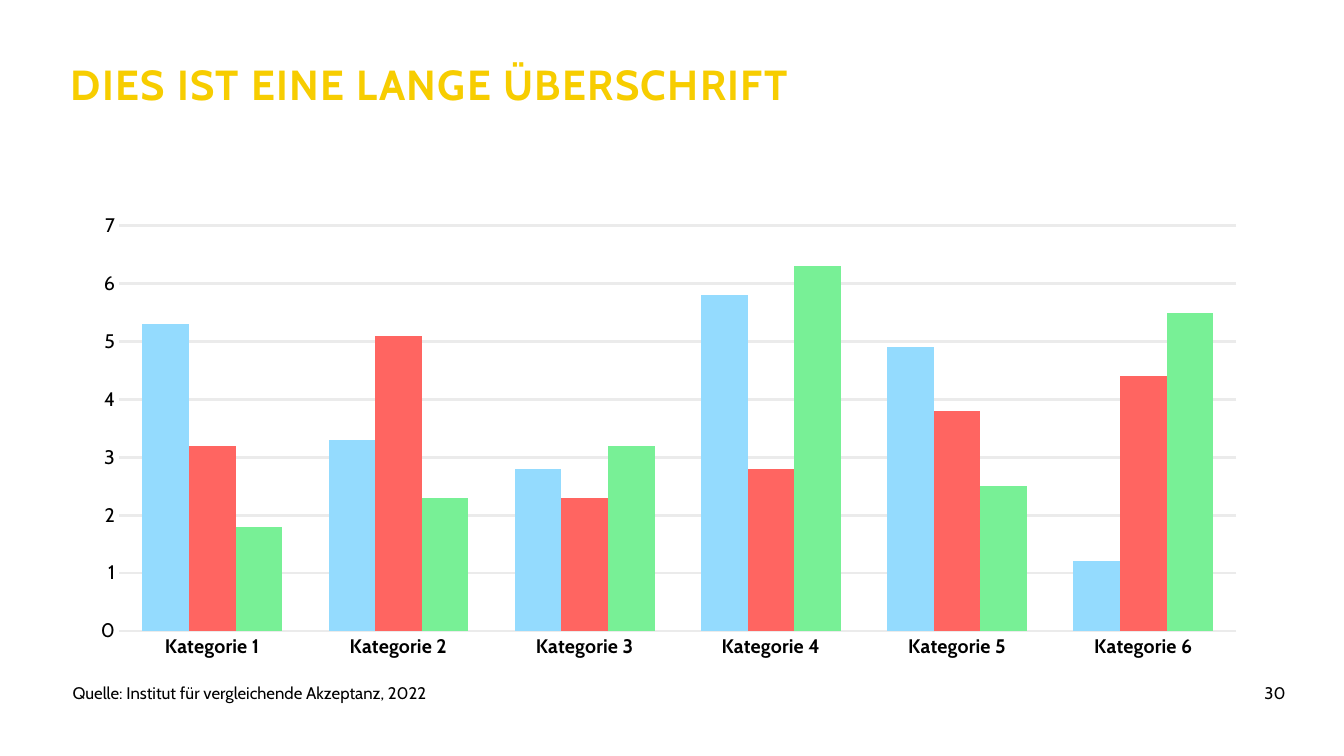
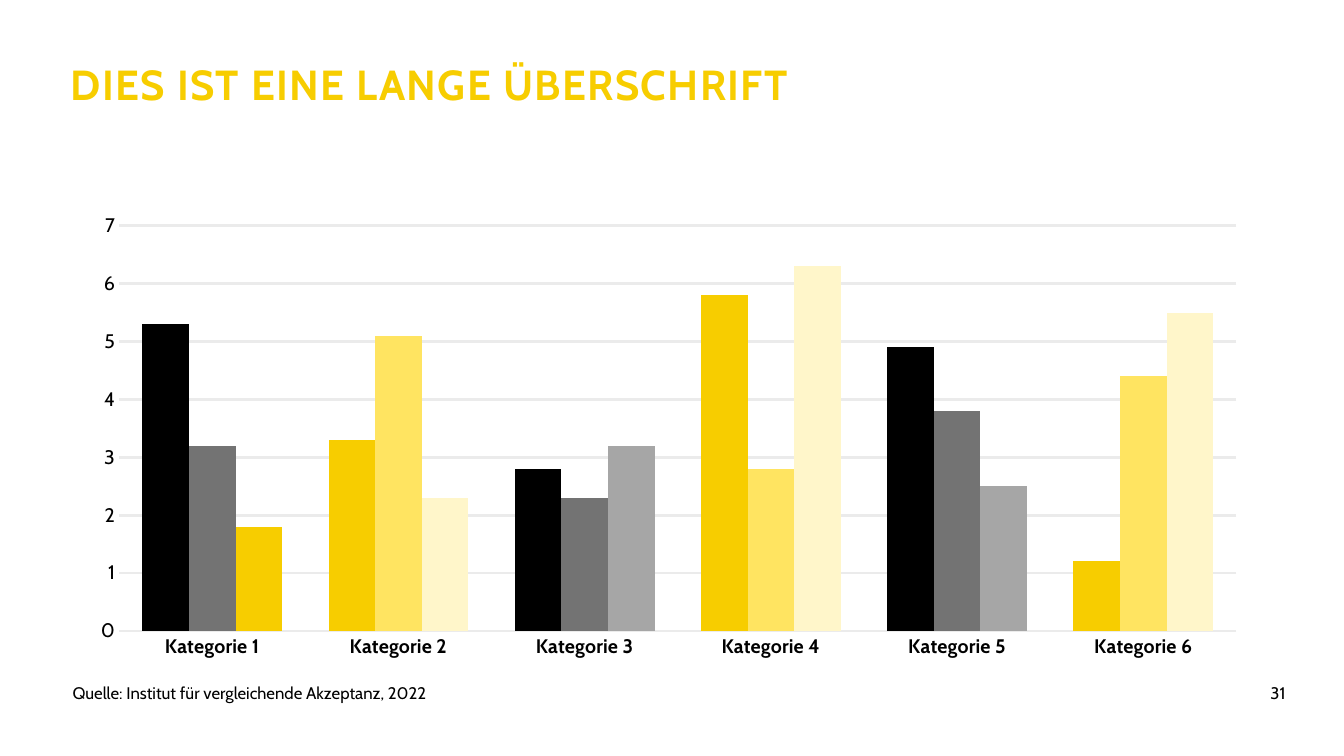
from lxml import etree
from pptx import Presentation
from pptx.chart.data import CategoryChartData
from pptx.dml.color import RGBColor
from pptx.enum.chart import XL_CHART_TYPE, XL_TICK_MARK
from pptx.enum.text import PP_ALIGN
from pptx.oxml.ns import qn
from pptx.util import Inches, Pt

COLUMNS = XL_CHART_TYPE.COLUMN_CLUSTERED
NO_TICK = XL_TICK_MARK.NONE
LEFT, RIGHT = PP_ALIGN.LEFT, PP_ALIGN.RIGHT

FONT = "Cabin"
BLACK, YELLOW, GRID = "000000", "F7CD00", "EBEBEB"
TITLE = "DIES IST EINE LANGE ÜBERSCHRIFT"
SOURCE = "Quelle: Institut für vergleichende Akzeptanz, 2022"

TITLE_BOX = (0.7, 0.66, 8.2, 1.12)
SOURCE_BOX = (0.72, 6.77, 8.18, 0.4)
NUMBER_BOX = (10.6, 6.77, 2.15, 0.4)
CHART_BOX = (0.71, 2.01, 11.79, 4.62)
PLOT_SHARES = {"x": 0.04, "y": 0.05, "w": 0.94, "h": 0.87}

CATEGORIES = [f"Kategorie {number}" for number in range(1, 7)]
SERIES = [
    ("Series 1", (5.3, 3.3, 2.8, 5.8, 4.9, 1.2)),
    ("Series 2", (3.2, 5.1, 2.3, 2.8, 3.8, 4.4)),
    ("Series 3", (1.8, 2.3, 3.2, 6.3, 2.5, 5.5)),
]
YELLOWS = (YELLOW, "FFE461", "FFF6CA")
SLIDES = [
    {"number": "30", "colors": ("94DBFE", "FF6561", "78F096"), "points": {}},
    {
        "number": "31",
        "colors": (BLACK, "737373", "A6A6A6"),
        "points": {
            (row, column): color
            for row, color in enumerate(YELLOWS)
            for column in (1, 3, 5)
        } | {(2, 0): YELLOW},
    },
]


def rgb(value):
    return RGBColor.from_string(value)


def style(font, size, color=BLACK, bold=False):
    font.name = FONT
    font.size = Pt(size)
    font.bold = bold
    font.color.rgb = rgb(color)


def fill(part, color):
    part.format.fill.solid()
    part.format.fill.fore_color.rgb = rgb(color)


def add_text(slide, box, text, size, color=BLACK, bold=False, align=LEFT):
    frame = slide.shapes.add_textbox(*map(Inches, box)).text_frame
    frame.word_wrap = True
    frame.margin_left = frame.margin_right = 0
    frame.margin_top = frame.margin_bottom = 0
    frame.text = text
    paragraph = frame.paragraphs[0]
    paragraph.alignment = align
    style(paragraph.runs[0].font, size, color, bold)
    return paragraph


def place_plot(chart):
    plot_area = chart._chartSpace.chart.plotArea
    for old_layout in plot_area.findall(qn("c:layout")):
        plot_area.remove(old_layout)
    layout = etree.Element(qn("c:layout"))
    manual = etree.SubElement(layout, qn("c:manualLayout"))
    settings = {"layoutTarget": "inner", "xMode": "edge", "yMode": "edge"}
    for name, value in (settings | PLOT_SHARES).items():
        etree.SubElement(manual, qn(f"c:{name}"), val=str(value))
    plot_area.insert(0, layout)


def add_column_chart(slide, colors, points):
    data = CategoryChartData()
    data.categories = CATEGORIES
    for name, values in SERIES:
        data.add_series(name, values)
    chart = slide.shapes.add_chart(COLUMNS, *map(Inches, CHART_BOX), data).chart
    chart.has_legend = False
    chart.has_title = False
    style(chart.font, 10)

    plot = chart.plots[0]
    plot.gap_width = 100
    plot.overlap = 0
    plot.vary_by_categories = False
    for series, color in zip(plot.series, colors):
        series.invert_if_negative = False
        fill(series, color)
    for (row, column), color in points.items():
        fill(plot.series[row].points[column], color)

    for axis, bold in ((chart.category_axis, True), (chart.value_axis, False)):
        axis.major_tick_mark = axis.minor_tick_mark = NO_TICK
        axis.format.line.fill.background()
        style(axis.tick_labels.font, 14, bold=bold)
    value_axis = chart.value_axis
    value_axis.minimum_scale, value_axis.maximum_scale = 0, 7
    value_axis.major_unit = 1
    value_axis.has_major_gridlines = True
    grid_line = value_axis.major_gridlines.format.line
    grid_line.width = Pt(2)
    grid_line.color.rgb = rgb(GRID)
    place_plot(chart)


def build_slide(presentation, content):
    slide = presentation.slides.add_slide(presentation.slide_layouts[6])
    add_text(slide, NUMBER_BOX, content["number"], 12, align=RIGHT)
    add_text(slide, SOURCE_BOX, SOURCE, 12)
    title = add_text(slide, TITLE_BOX, TITLE, 30, YELLOW, bold=True)
    title.line_spacing = 0.85
    title.runs[0].font._element.set("spc", "100")
    add_column_chart(slide, content["colors"], content["points"])


def main():
    presentation = Presentation()
    presentation.slide_width = Inches(13.33)
    presentation.slide_height = Inches(7.5)
    for content in SLIDES:
        build_slide(presentation, content)
    presentation.save("out.pptx")


if __name__ == "__main__":
    main()
